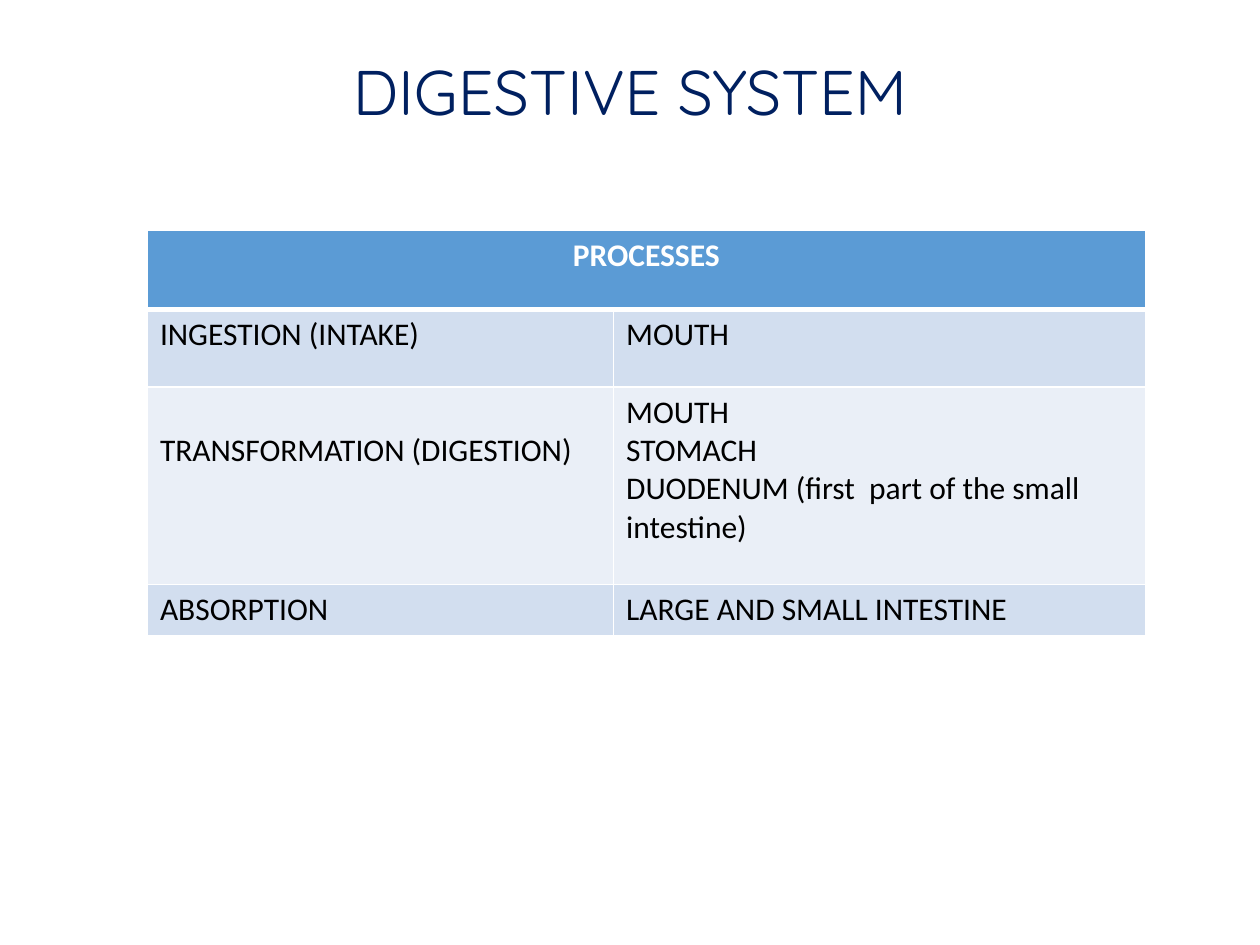
from dataclasses import dataclass

from lxml import etree
from pptx import Presentation
from pptx.dml.color import RGBColor
from pptx.enum.text import MSO_ANCHOR, MSO_AUTO_SIZE, PP_ALIGN
from pptx.oxml.ns import qn
from pptx.util import Pt

CENTER, LEFT = PP_ALIGN.CENTER, PP_ALIGN.LEFT
MIDDLE, TOP = MSO_ANCHOR.MIDDLE, MSO_ANCHOR.TOP
NO_FIT = MSO_AUTO_SIZE.NONE


@dataclass(frozen=True)
class Theme:
    title_font: str = "Quicksand"
    body_font: str = "Calibri"
    title_size: float = 36
    body_size: float = 18
    navy: str = "002060"
    header: str = "5B9BD5"
    bands: tuple = ("D2DEEF", "EAEFF7")
    white: str = "FFFFFF"
    black: str = "000000"
    rule: float = 1
    header_rule: float = 3


THEME = Theme()
TITLE = "DIGESTIVE SYSTEM"
HEADER = "PROCESSES"
PROCESSES = [
    ("INGESTION (INTAKE)", "MOUTH"),
    ("TRANSFORMATION (DIGESTION)",
     "MOUTH\nSTOMACH\nDUODENUM (first  part of the small intestine)"),
    ("ABSORPTION", "LARGE AND SMALL INTESTINE"),
]
COL_WIDTHS = (266.4, 303.84)
ROW_HEIGHTS = (45.2, 44.1, 113, 29.5)
LOWERED_ROW, LOWERED_MARGIN = 2, 25.6


def write_text(tf, text, *, font, size, color, bold=False, align=LEFT):
    for i, line in enumerate(text.split("\n")):
        p = tf.paragraphs[0] if i == 0 else tf.add_paragraph()
        p.alignment = align
        r = p.add_run()
        r.text = line
        r.font.name = font
        r.font.size = Pt(size)
        r.font.bold = bold
        r.font.color.rgb = RGBColor.from_string(color)


def style_cell(cell, fill, top, bottom):
    tc_pr = cell._tc.get_or_add_tcPr()
    widths = {"L": THEME.rule, "R": THEME.rule, "T": top, "B": bottom}
    for side, width in widths.items():
        ln = etree.SubElement(tc_pr, qn(f"a:ln{side}"), w=str(Pt(width)))
        solid = etree.SubElement(ln, qn("a:solidFill"))
        etree.SubElement(solid, qn("a:srgbClr"), val=THEME.white)
    cell.fill.solid()
    cell.fill.fore_color.rgb = RGBColor.from_string(fill)
    cell.vertical_anchor = TOP


def add_title(slide, left, top, width, height):
    sp = slide.shapes.title
    sp.left, sp.top, sp.width, sp.height = map(Pt, (left, top, width, height))
    tf = sp.text_frame
    tf.word_wrap = True
    tf.auto_size = NO_FIT
    tf.vertical_anchor = MIDDLE
    write_text(tf, TITLE, font=THEME.title_font, size=THEME.title_size,
               color=THEME.navy, align=CENTER)


def add_process_table(slide, left, top, width, height):
    frame = slide.shapes.add_table(len(ROW_HEIGHTS), len(COL_WIDTHS),
                                   *map(Pt, (left, top, width, height)))
    table = frame.table
    for col, share in zip(table.columns, COL_WIDTHS):
        col.width = Pt(width * share / sum(COL_WIDTHS))
    for row, share in zip(table.rows, ROW_HEIGHTS):
        row.height = Pt(height * share / sum(ROW_HEIGHTS))

    table.cell(0, 0).merge(table.cell(0, 1))
    for cell in table.rows[0].cells:
        style_cell(cell, THEME.header, THEME.rule, THEME.header_rule)
    write_text(table.cell(0, 0).text_frame, HEADER, font=THEME.body_font,
               size=THEME.body_size, color=THEME.white, bold=True, align=CENTER)

    for i, texts in enumerate(PROCESSES, start=1):
        rule_above = THEME.header_rule if i == 1 else THEME.rule
        for cell, text in zip(table.rows[i].cells, texts):
            style_cell(cell, THEME.bands[(i - 1) % 2], rule_above, THEME.rule)
            write_text(cell.text_frame, text, font=THEME.body_font,
                       size=THEME.body_size, color=THEME.black)
    table.cell(LOWERED_ROW, 0).margin_top = Pt(LOWERED_MARGIN)


def main():
    prs = Presentation()
    prs.slide_width, prs.slide_height = Pt(720), Pt(540)
    slide = prs.slides.add_slide(prs.slide_layouts[5])
    add_title(slide, 182.88, 25.92, 354.24, 51.12)
    add_process_table(slide, 84.24, 131.76, sum(COL_WIDTHS), sum(ROW_HEIGHTS))
    prs.save("out.pptx")


if __name__ == "__main__":
    main()
